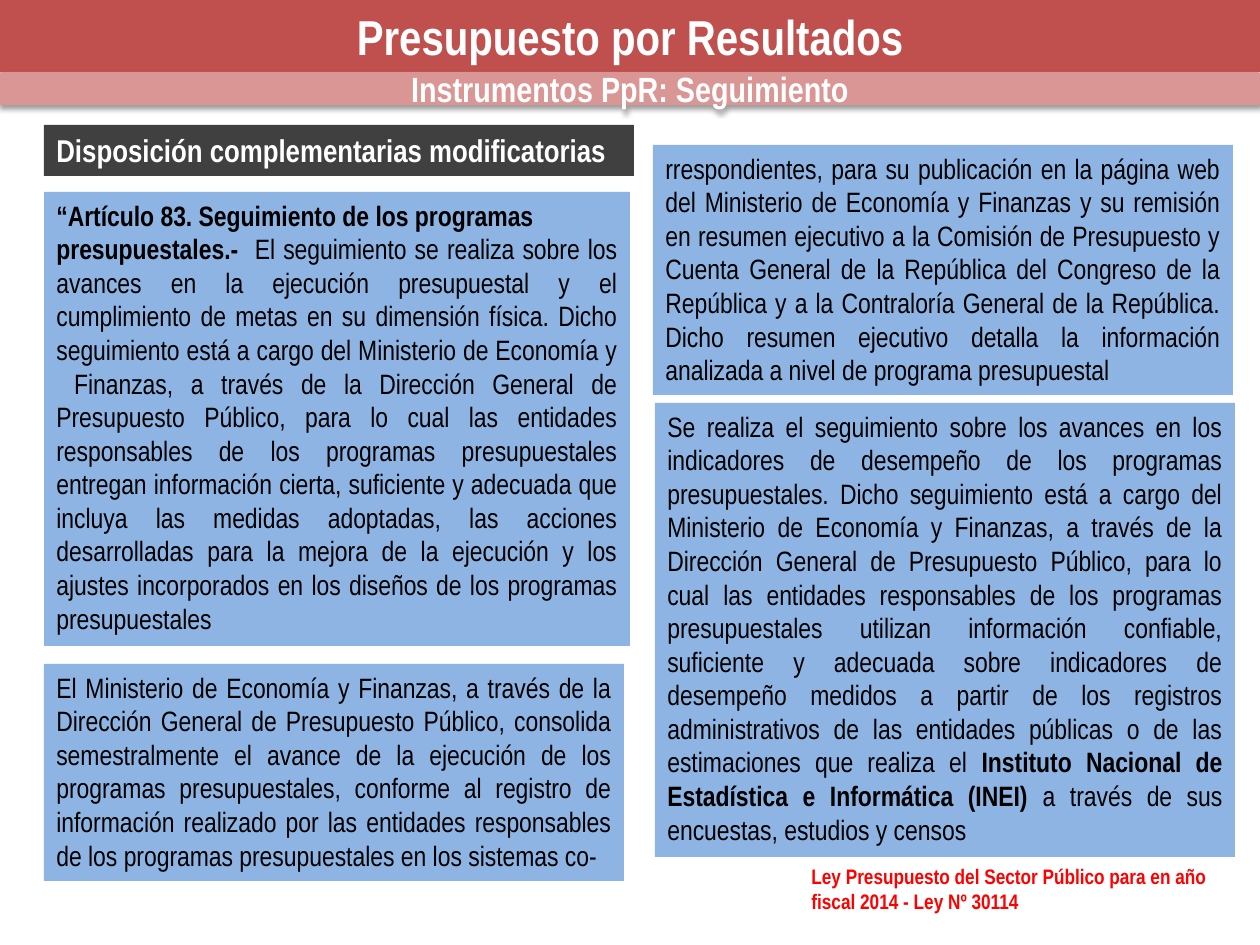
from lxml.etree import SubElement
from pptx import Presentation
from pptx.dml.color import RGBColor
from pptx.enum.shapes import MSO_SHAPE as Shape
from pptx.enum.text import MSO_ANCHOR as Anchor, MSO_AUTO_SIZE as AutoSize, PP_ALIGN as Align
from pptx.oxml.ns import qn
from pptx.util import Emu, Pt

PX_PER_INCH = 126
FONT = "Arial Narrow"
WHITE = RGBColor(0xFF, 0xFF, 0xFF)
BLACK = RGBColor(0x00, 0x00, 0x00)
RED = RGBColor(0xFF, 0x00, 0x00)
BRICK = RGBColor(0xC0, 0x50, 0x4D)
ROSE = RGBColor(0xD9, 0x96, 0x94)
CHARCOAL = RGBColor(0x40, 0x40, 0x40)
SKY = RGBColor(0x8E, 0xB4, 0xE3)

WIDTH, HEIGHT = 1260, 945
LEFT = 44

ARTICLE = [
    [("“Artículo 83. Seguimiento de los programas", True)],
    [("presupuestales.-  ", True),
     ("El seguimiento se realiza sobre los avances en la ejecución presupuestal y el "
      "cumplimiento de metas en su dimensión física. Dicho seguimiento está a cargo del "
      "Ministerio de Economía y  Finanzas, a través de la Dirección General de Presupuesto "
      "Público, para lo cual las entidades responsables de los programas presupuestales "
      "entregan información cierta, suficiente y adecuada que incluya las medidas adoptadas, "
      "las acciones desarrolladas para la mejora de la ejecución y los ajustes incorporados "
      "en los diseños de los programas presupuestales", False)],
]
CONSOLIDATION = [[
    ("El Ministerio de Economía y Finanzas, a través de la Dirección General de Presupuesto "
     "Público, consolida semestralmente el avance de la ejecución de los programas "
     "presupuestales, conforme al registro de información realizado por las entidades "
     "responsables de los programas presupuestales en los sistemas co-", False),
]]
PUBLICATION = [[
    ("rrespondientes, para su publicación en la página web del Ministerio de Economía y "
     "Finanzas y su remisión en resumen ejecutivo a la Comisión de Presupuesto y Cuenta "
     "General de la República del Congreso de la República y a la Contraloría General de la "
     "República. Dicho resumen ejecutivo detalla la información analizada a nivel de programa "
     "presupuestal", False),
]]
INDICATORS = [[
    ("Se realiza el seguimiento sobre los avances en los indicadores de desempeño de los "
     "programas presupuestales. Dicho seguimiento está a cargo del Ministerio de Economía y "
     "Finanzas, a través de la Dirección General de Presupuesto Público, para lo cual las "
     "entidades responsables de los programas presupuestales utilizan información confiable, "
     "suficiente y adecuada sobre indicadores de desempeño medidos a partir de los registros "
     "administrativos de las entidades públicas o de las estimaciones que realiza el ", False),
    ("Instituto Nacional de Estadística e Informática (INEI) ", True),
    ("a través de sus encuestas, estudios y censos", False),
]]


def px(length):
    return Emu(round(length * 914400 / PX_PER_INCH))


class SlideBuilder:
    def __init__(self, slide):
        self.shapes = slide.shapes

    def add_text(self, shape, paragraphs, size, color, align, grow=True):
        """Fill a shape with paragraphs, each a list of (text, bold) runs."""
        frame = shape.text_frame
        frame.word_wrap = True
        frame.auto_size = AutoSize.SHAPE_TO_FIT_TEXT if grow else AutoSize.NONE
        frame.vertical_anchor = Anchor.TOP if grow else Anchor.MIDDLE
        for index, runs in enumerate(paragraphs):
            paragraph = frame.add_paragraph() if index else frame.paragraphs[0]
            paragraph.alignment = align
            font = paragraph.font
            font.name, font.size = FONT, Pt(size)
            font.color.rgb = color
            font.bold = runs[0][1]
            for text, bold in runs:
                run = paragraph.add_run()
                run.text = text
                if bold != font.bold:
                    run.font.bold = bold

    def panel(self, box, fill, kind=Shape.RECTANGLE):
        shape = self.shapes.add_shape(kind, *map(px, box))
        shape.shadow.inherit = False
        shape.fill.solid()
        shape.fill.fore_color.rgb = fill
        shape.line.fill.background()
        return shape

    def heading(self, box, text, size, fill, align):
        self.add_text(self.panel(box, fill), [[(text, True)]], size, WHITE, align)

    def subtitle(self, box, text):
        band = self.panel(box, ROSE, Shape.ROUNDED_RECTANGLE)
        band.adjustments[0] = 0.05
        self.drop_shadow(band)
        self.add_text(band, [[(text, True)]], 20, WHITE, Align.CENTER, grow=False)

    def drop_shadow(self, shape):
        effects = shape.element.spPr.find(qn("a:effectLst"))
        shadow = SubElement(effects, qn("a:outerShdw"), blurRad=str(Pt(3.1)),
                            dist=str(Pt(1.6)), dir="5400000", rotWithShape="0")
        color = SubElement(shadow, qn("a:srgbClr"), val=str(BLACK))
        SubElement(color, qn("a:alpha"), val="38000")

    def body(self, box, paragraphs):
        self.add_text(self.panel(box, SKY), paragraphs, 16, BLACK, Align.JUSTIFY)

    def source_note(self, box, text):
        note = self.shapes.add_textbox(*map(px, box))
        self.add_text(note, [[(text, True)]], 12, RED, Align.LEFT)


def main():
    deck = Presentation()
    deck.slide_width, deck.slide_height = px(WIDTH), px(HEIGHT)
    builder = SlideBuilder(deck.slides.add_slide(deck.slide_layouts[6]))

    builder.heading((0, 0, WIDTH, 72), "Presupuesto por Resultados", 28, BRICK, Align.CENTER)
    builder.subtitle((0, 72, WIDTH, 33), "Instrumentos PpR: Seguimiento")
    builder.heading((LEFT, 125, 590, 51), "Disposición complementarias modificatorias",
                    18, CHARCOAL, Align.LEFT)
    builder.body((LEFT, 192, 586, 454), ARTICLE)
    builder.body((LEFT, 664, 580, 217), CONSOLIDATION)
    builder.body((653, 145, 580, 250), PUBLICATION)
    builder.source_note((799, 857, 446, 63),
                        "Ley Presupuesto del Sector Público para en año fiscal 2014 - Ley Nº 30114")
    builder.body((655, 403, 580, 454), INDICATORS)

    deck.save("out.pptx")


if __name__ == "__main__":
    main()
